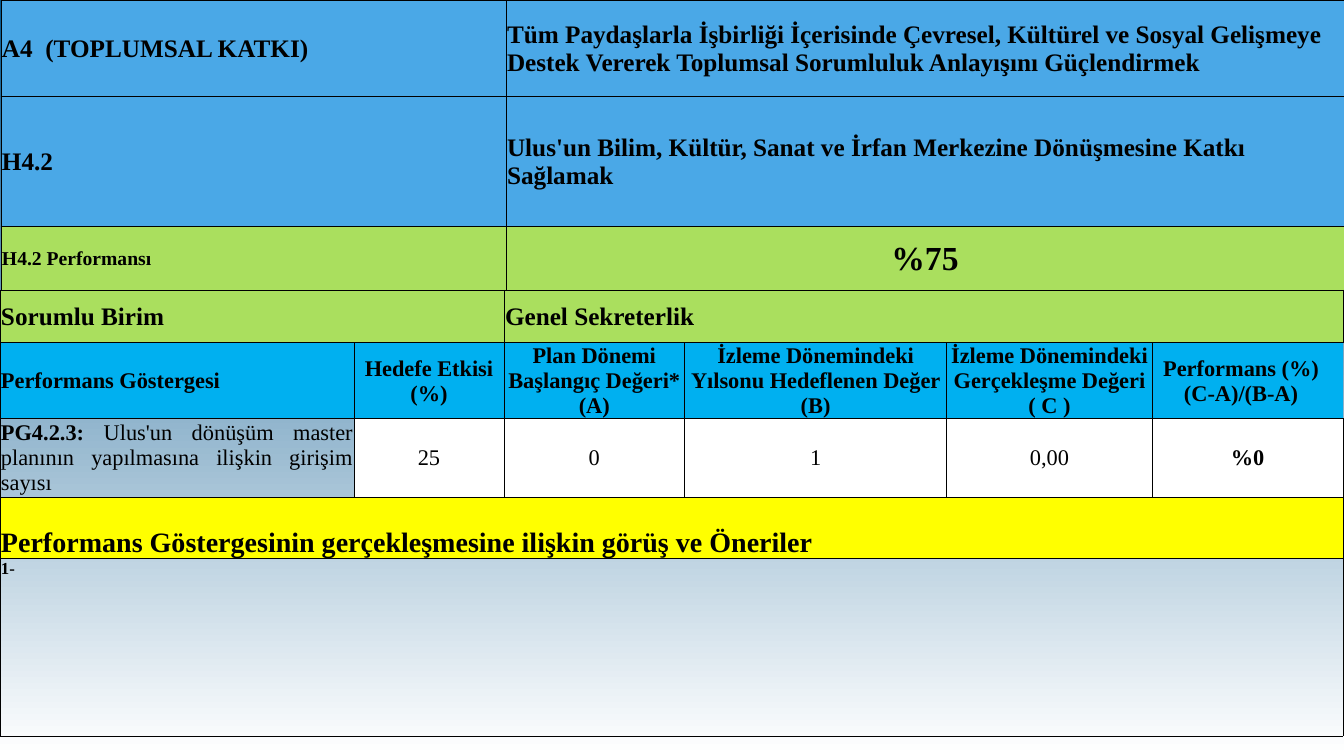
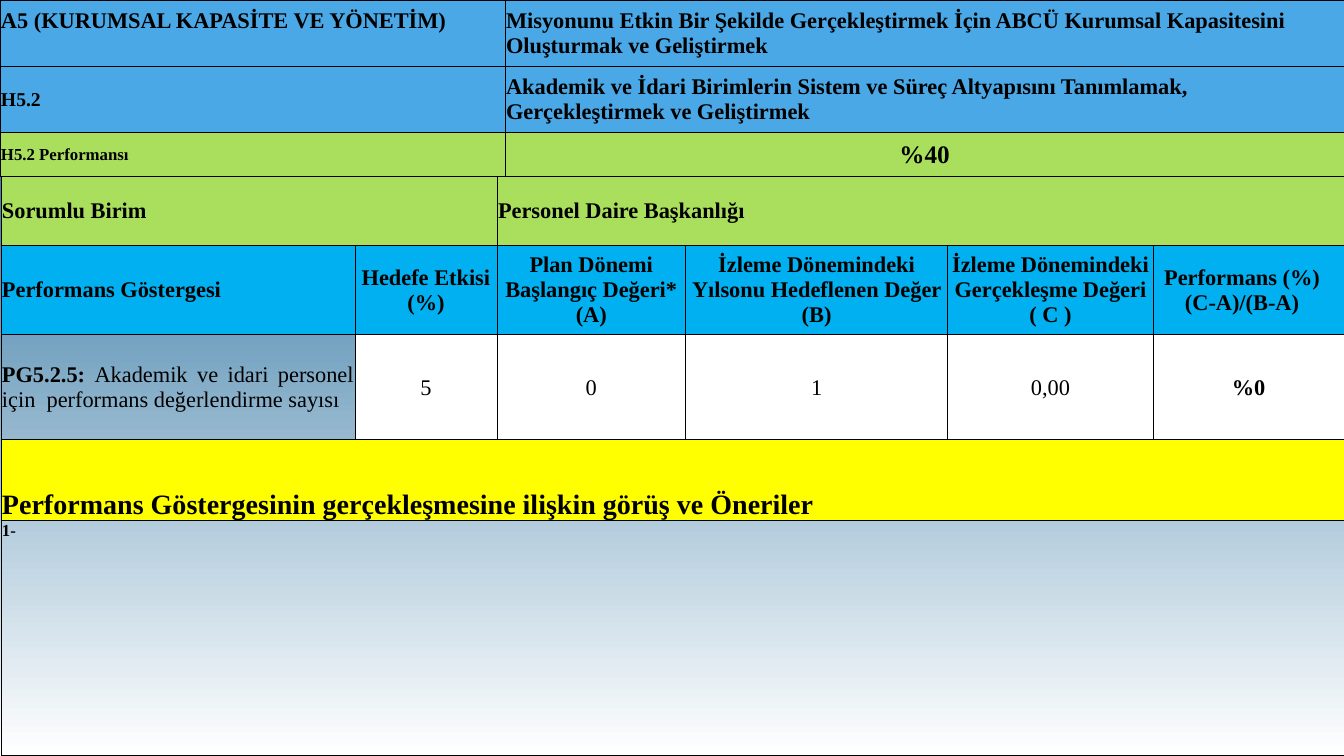
from lxml import etree
from pptx import Presentation
from pptx.dml.color import RGBColor
from pptx.enum.text import MSO_ANCHOR, PP_ALIGN
from pptx.oxml.ns import qn
from pptx.util import Inches, Pt

LEFT, CENTER, JUSTIFY = PP_ALIGN.LEFT, PP_ALIGN.CENTER, PP_ALIGN.JUSTIFY
TOP, MIDDLE, BOTTOM = MSO_ANCHOR.TOP, MSO_ANCHOR.MIDDLE, MSO_ANCHOR.BOTTOM

COLORS = {
    "goal": "4AA8E7", "unit": "AADF5E", "header": "00B0F0", "value": "FFFFFF",
    "opinion": "FFFF00", "text": "000000", "border": "000000",
    "background_low": "FFFFFF", "background_high": "06588E",
}
FONT = "Times New Roman"
PLAIN_STYLE = "{2D5ABB26-0587-4C30-8999-92F81FD0307C}"
INSETS = {"margin_left": 0.01, "margin_right": 0.01, "margin_top": 0.01, "margin_bottom": 0}
HEADERS = [
    "Hedefe Etkisi (%)",
    "Plan Dönemi Başlangıç Değeri* (A)",
    "İzleme Dönemindeki Yılsonu Hedeflenen Değer (B)",
    "İzleme Dönemindeki Gerçekleşme Değeri ( C )",
]
SCORE_HEADER = "Performans (%) (C-A)/(B-A)"
OPINION_TITLE = "Performans Göstergesinin gerçekleşmesine ilişkin görüş ve Öneriler"

PAGES = [
    {
        "aim": ("A4  (TOPLUMSAL KATKI)", 18, {}),
        "aim_text": "Tüm Paydaşlarla İşbirliği İçerisinde Çevresel, Kültürel ve Sosyal "
                    "Gelişmeye Destek Vererek Toplumsal Sorumluluk Anlayışını Güçlendirmek",
        "target": ("H4.2", 18),
        "target_text": "Ulus'un Bilim, Kültür, Sanat ve İrfan Merkezine Dönüşmesine Katkı Sağlamak",
        "score_label": ("H4.2 Performansı", 14), "score": ("%75", 24),
        "unit": "Genel Sekreterlik", "text_size": 18,
        "indicator": ("PG4.2.3: ", "Ulus'un dönüşüm master planının yapılmasına ilişkin girişim sayısı"),
        "values": ["25", "0", "1", "0,00", "%0"],
        "goal_left": 0.01, "goal_widths": [3.62, 1.39, 8.31], "goal_heights": [0.96, 1.29, 0.63],
        "left": 0, "top": 2.88, "widths": [3.51, 1.49, 1.79, 2.6, 2.04, 1.89],
        "heights": [0.52, 0.75, 0.78, 0.61, 1.76],
    },
    {
        "aim": ("A5 (KURUMSAL KAPASİTE VE YÖNETİM)", 16, {"anchor": TOP, "margin_top": 0.08}),
        "aim_text": "Misyonunu Etkin Bir Şekilde Gerçekleştirmek İçin ABCÜ Kurumsal "
                    "Kapasitesini Oluşturmak ve Geliştirmek",
        "target": ("H5.2", 14),
        "target_text": "Akademik ve İdari Birimlerin Sistem ve Süreç Altyapısını Tanımlamak, "
                       "Gerçekleştirmek ve Geliştirmek",
        "score_label": ("H5.2 Performansı", 12), "score": ("%40", 18),
        "unit": "Personel Daire Başkanlığı", "text_size": 16,
        "indicator": ("PG5.2.5: ", "Akademik ve idari personel için  performans değerlendirme sayısı"),
        "values": ["5", "0", "1", "0,00", "%0"],
        "goal_left": 0, "goal_widths": [3.62, 1.39, 8.32], "goal_heights": [0.66, 0.65, 0.44],
        "left": 0.01, "top": 1.75, "widths": [3.51, 1.41, 1.87, 2.6, 2.04, 1.89],
        "heights": [0.68, 0.89, 1.04, 0.8, 2.33],
    },
]


def entry(text, size, fill, columns=1, align=LEFT, bold=True, anchor=MIDDLE, tail="", sides="LRTB", **insets):
    """Describe one cell; tail is regular text after the main text, sides are the drawn borders."""
    return {
        "spans": [(text, bold), (tail, False)], "size": size, "fill": fill, "columns": columns,
        "align": align, "anchor": anchor, "sides": sides, "insets": {**INSETS, **insets},
    }


def add_grid(page, left, top, widths, heights, rows):
    """Add a table whose rows are lists of entries."""
    frame = page.shapes.add_table(len(heights), len(widths), Inches(left), Inches(top),
                                  Inches(sum(widths)), Inches(sum(heights)))
    table = frame.table
    table.first_row = table.horz_banding = False
    frame.element.find(".//" + qn("a:tableStyleId")).text = PLAIN_STYLE
    for column, width in zip(table.columns, widths):
        column.width = Inches(width)
    for row, height in zip(table.rows, heights):
        row.height = Inches(height)

    for row_index, row in enumerate(rows):
        start = 0
        for item in row:
            end = start + item["columns"]
            cell = table.cell(row_index, start)
            if item["columns"] > 1:
                cell.merge(table.cell(row_index, end - 1))
            for name, value in item["insets"].items():
                setattr(cell, name, Inches(value))
            cell.vertical_anchor = item["anchor"]
            if item["fill"]:
                cell.fill.solid()
                cell.fill.fore_color.rgb = RGBColor.from_string(COLORS[item["fill"]])
            else:
                cell.fill.background()

            # Text
            para = cell.text_frame.paragraphs[0]
            para.alignment = item["align"]
            for text, bold in item["spans"]:
                if text:
                    span = para.add_run()
                    span.text = text
                    span.font.color.rgb = RGBColor.from_string(COLORS["text"])
                    for name, value in {"name": FONT, "size": Pt(item["size"]), "bold": bold}.items():
                        setattr(span.font, name, value)

            # Borders
            properties = cell._tc.get_or_add_tcPr()
            for position, side in enumerate(item["sides"]):
                line = etree.Element(qn("a:ln" + side), w=str(Pt(0.5)))
                paint = etree.SubElement(line, qn("a:solidFill"))
                etree.SubElement(paint, qn("a:srgbClr"), val=COLORS["border"])
                properties.insert(position, line)
            start = end


deck = Presentation()
deck.slide_width, deck.slide_height = Inches(13.33), Inches(7.5)

# Shared background, white at the bottom
background = deck.slide_master.background.fill
background.gradient()
background.gradient_angle = 90
for stop, position, name in zip(background.gradient_stops, (0, 1), ("background_low", "background_high")):
    stop.position = position
    stop.color.rgb = RGBColor.from_string(COLORS[name])

for content in PAGES:
    page = deck.slides.add_slide(deck.slide_layouts[6])
    size = content["text_size"]

    # Aim, target and score
    aim, aim_size, aim_format = content["aim"]
    goal_rows = [
        [entry(aim, aim_size, "goal", 2, **aim_format), entry(content["aim_text"], size, "goal")],
        [entry(*content["target"], "goal", align=JUSTIFY, sides="LTB"),
         entry("", size, "goal", sides="RTB"),
         entry(content["target_text"], size, "goal")],
        [entry(*content["score_label"], "unit", 2), entry(*content["score"], "unit", align=CENTER)],
    ]
    add_grid(page, content["goal_left"], 0, content["goal_widths"], content["goal_heights"], goal_rows)

    # Responsible unit, indicator and opinions
    code, indicator = content["indicator"]
    indicator_rows = [
        [entry("Sorumlu Birim", size, "unit", 2), entry(content["unit"], size, "unit", 4)],
        [entry("Performans Göstergesi", 16, "header", align=JUSTIFY)]
        + [entry(header, 16, "header", align=CENTER) for header in HEADERS]
        + [entry(SCORE_HEADER, 16, "header", align=CENTER, sides="LTB", margin_right=0.14)],
        [entry(code, 16, None, align=JUSTIFY, tail=indicator)]
        + [entry(value, 16, "value", align=CENTER, bold=value.startswith("%")) for value in content["values"]],
        [entry(OPINION_TITLE, 20, "opinion", 6, anchor=BOTTOM)],
        [entry("1-", 12, None, 6, anchor=TOP)],
    ]
    add_grid(page, content["left"], content["top"], content["widths"], content["heights"], indicator_rows)

deck.save("out.pptx")
